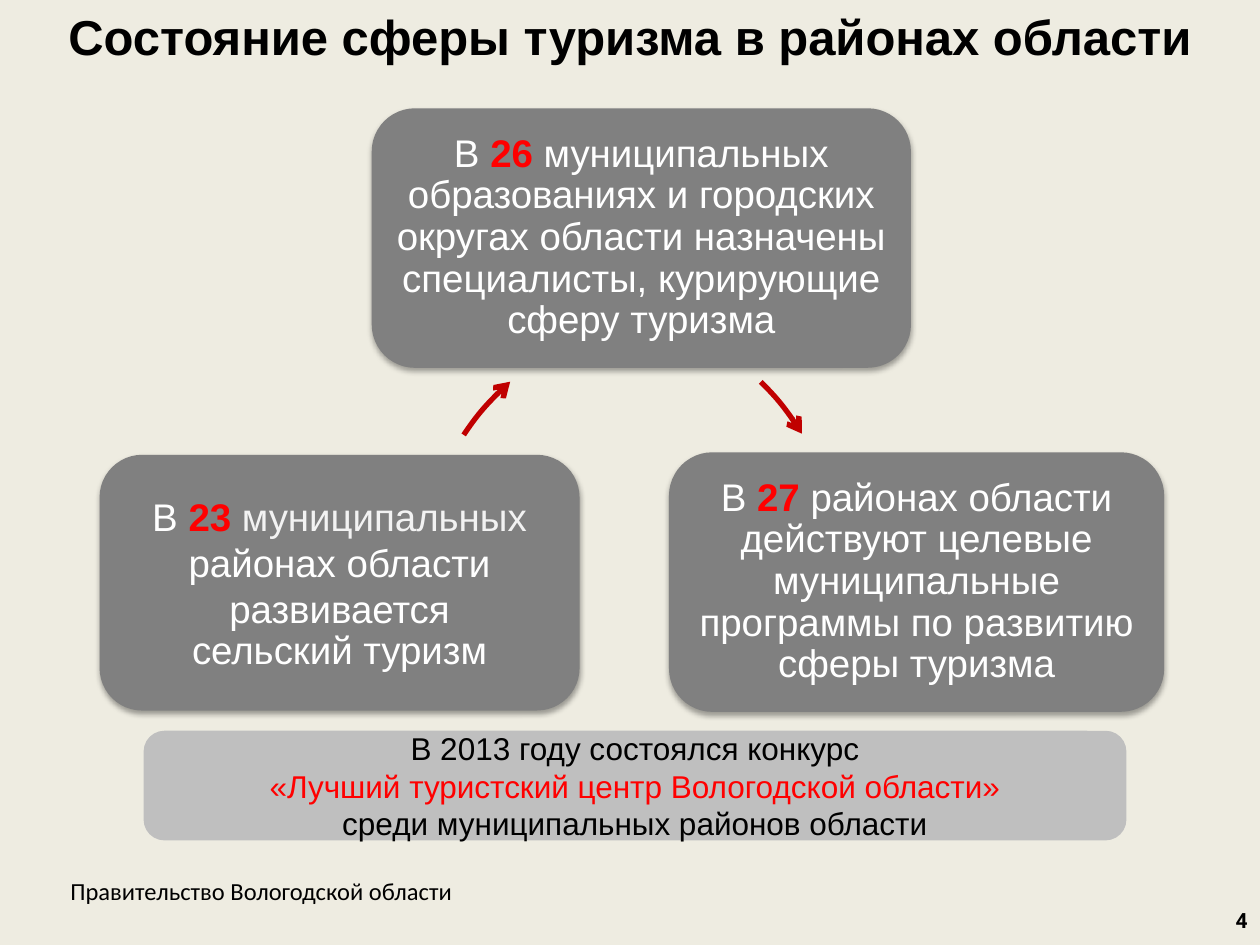
from dataclasses import dataclass
from typing import NamedTuple

from lxml.etree import SubElement
from pptx import Presentation
from pptx.dml.color import RGBColor
from pptx.enum.shapes import MSO_SHAPE
from pptx.enum.text import MSO_ANCHOR, PP_ALIGN
from pptx.oxml.ns import qn
from pptx.util import Inches, Pt


@dataclass(frozen=True)
class Theme:
    back: str = "EEECE1"
    card: str = "808080"
    bar: str = "BFBFBF"
    arrow: str = "C00000"
    black: str = "000000"
    white: str = "FFFFFF"
    pale: str = "F2F2F2"
    red: str = "FF0000"
    font: str = "Arial"
    title: int = 28
    body: int = 22
    note: int = 18
    foot: int = 14
    page: int = 12


THEME = Theme()


class Run(NamedTuple):
    text: str
    color: str = THEME.white
    bold: bool = False


class Line(NamedTuple):
    runs: list[Run]
    space: float = 1.0


class Card(NamedTuple):
    box: tuple[float, float, float, float]
    lines: list[Line]


class Arc(NamedTuple):
    """Part of a circle, clockwise, in degrees."""
    left: float
    top: float
    start: float
    end: float


RING = 4.38
CARDS = [
    Card((2.95, 0.86, 4.28, 2.06), [Line([
        Run("В "), Run("26", THEME.red, True),
        Run(" муниципальных образованиях и городских округах области "
            "назначены специалисты, курирующие сферу туризма")], 0.9)]),
    Card((5.31, 3.59, 3.93, 2.06), [Line([
        Run("В "), Run("27 ", THEME.red, True),
        Run("районах области действуют целевые муниципальные "
            "программы по развитию сферы туризма")], 0.9)]),
    Card((0.79, 3.61, 3.81, 2.03), [
        Line([Run("В "), Run("23 ", THEME.red, True),
              Run("муниципальных ", THEME.pale),
              Run("районах области развивается")]),
        Line([Run("сельский туризм")], 0.9)]),
]
ARCS = [Arc(2.31, 2.4, 314.6, 328.4), Arc(3.31, 2.48, 213.8, 228.5)]
CONTEST = [
    Line([Run("В 2013 году состоялся конкурс", THEME.black)]),
    Line([Run("«Лучший туристский центр Вологодской области»", THEME.red)]),
    Line([Run("среди муниципальных районов области", THEME.black)]),
]


def rgb(color: str) -> RGBColor:
    return RGBColor.from_string(color)


def write(shape, lines: list[Line], *, size: int, font: str = THEME.font,
          align=PP_ALIGN.CENTER, anchor=MSO_ANCHOR.MIDDLE,
          wrap: bool = True, inset: tuple[float, float] = (0.1, 0.05)) -> None:
    frame = shape.text_frame
    frame.word_wrap = wrap
    frame.vertical_anchor = anchor
    frame.margin_left = frame.margin_right = Inches(inset[0])
    frame.margin_top = frame.margin_bottom = Inches(inset[1])
    for index, line in enumerate(lines):
        para = frame.add_paragraph() if index else frame.paragraphs[0]
        para.alignment = align
        para.line_spacing = line.space
        for text, color, bold in line.runs:
            run = para.add_run()
            run.text = text
            run.font.name = font
            run.font.size = Pt(size)
            run.font.bold = bold
            run.font.color.rgb = rgb(color)


def label(slide, box: tuple, run: Run, **style) -> None:
    write(slide.shapes.add_textbox(*map(Inches, box)), [Line([run])], **style)


def panel(slide, box: tuple, color: str):
    shape = slide.shapes.add_shape(MSO_SHAPE.ROUNDED_RECTANGLE, *map(Inches, box))
    shape.shadow.inherit = False
    shape.fill.solid()
    shape.fill.fore_color.rgb = rgb(color)
    shape.line.fill.background()
    return shape


def shade(shape) -> None:
    """Give the shape a soft shadow below it."""
    effects = shape._element.spPr.find(qn("a:effectLst"))
    outer = SubElement(effects, qn("a:outerShdw"), blurRad=str(Pt(3.1)),
                       dist=str(Pt(1.8)), dir="5400000", rotWithShape="0")
    color = SubElement(outer, qn("a:srgbClr"), val=THEME.black)
    SubElement(color, qn("a:alpha"), val="35000")


def draw_card(slide, card: Card) -> None:
    shape = panel(slide, card.box, THEME.card)
    shade(shape)
    write(shape, card.lines, size=THEME.body, inset=(0.09, 0.09))


def draw_arc(slide, arc: Arc) -> None:
    shape = slide.shapes.add_shape(
        MSO_SHAPE.ARC, *map(Inches, (arc.left, arc.top, RING, RING)))
    shape.shadow.inherit = False
    shape.fill.background()
    for index, angle in enumerate((arc.start, arc.end)):
        shape.adjustments[index] = angle * 0.6  # 60000 units a degree
    shape.line.color.rgb = rgb(THEME.arrow)
    shape.line.width = Pt(3)
    SubElement(shape.line._get_or_add_ln(), qn("a:tailEnd"), type="arrow")


def main() -> None:
    deck = Presentation()
    deck.slide_width, deck.slide_height = Inches(10), Inches(7.5)
    slide = deck.slides.add_slide(deck.slide_layouts[6])
    slide.background.fill.solid()
    slide.background.fill.fore_color.rgb = rgb(THEME.back)

    label(slide, (0.46, 6.9, 3.26, 0.34),
          Run("Правительство Вологодской области", THEME.black),
          size=THEME.foot, font="Calibri", align=PP_ALIGN.LEFT,
          anchor=MSO_ANCHOR.TOP, wrap=False)
    for card in CARDS:
        draw_card(slide, card)
    for arc in ARCS:
        draw_arc(slide, arc)
    label(slide, (0, 0, 10, 0.58),
          Run("Состояние сферы туризма в районах области", THEME.black, True),
          size=THEME.title, anchor=MSO_ANCHOR.TOP)
    bar = panel(slide, (1.14, 5.8, 7.8, 0.87), THEME.bar)
    bar.adjustments[0] = 0.19
    write(bar, CONTEST, size=THEME.note)
    label(slide, (9.4, 7.1, 0.6, 0.4), Run("4", THEME.black, True),
          size=THEME.page, font="Roboto", align=PP_ALIGN.RIGHT)
    deck.save("out.pptx")


if __name__ == "__main__":
    main()
